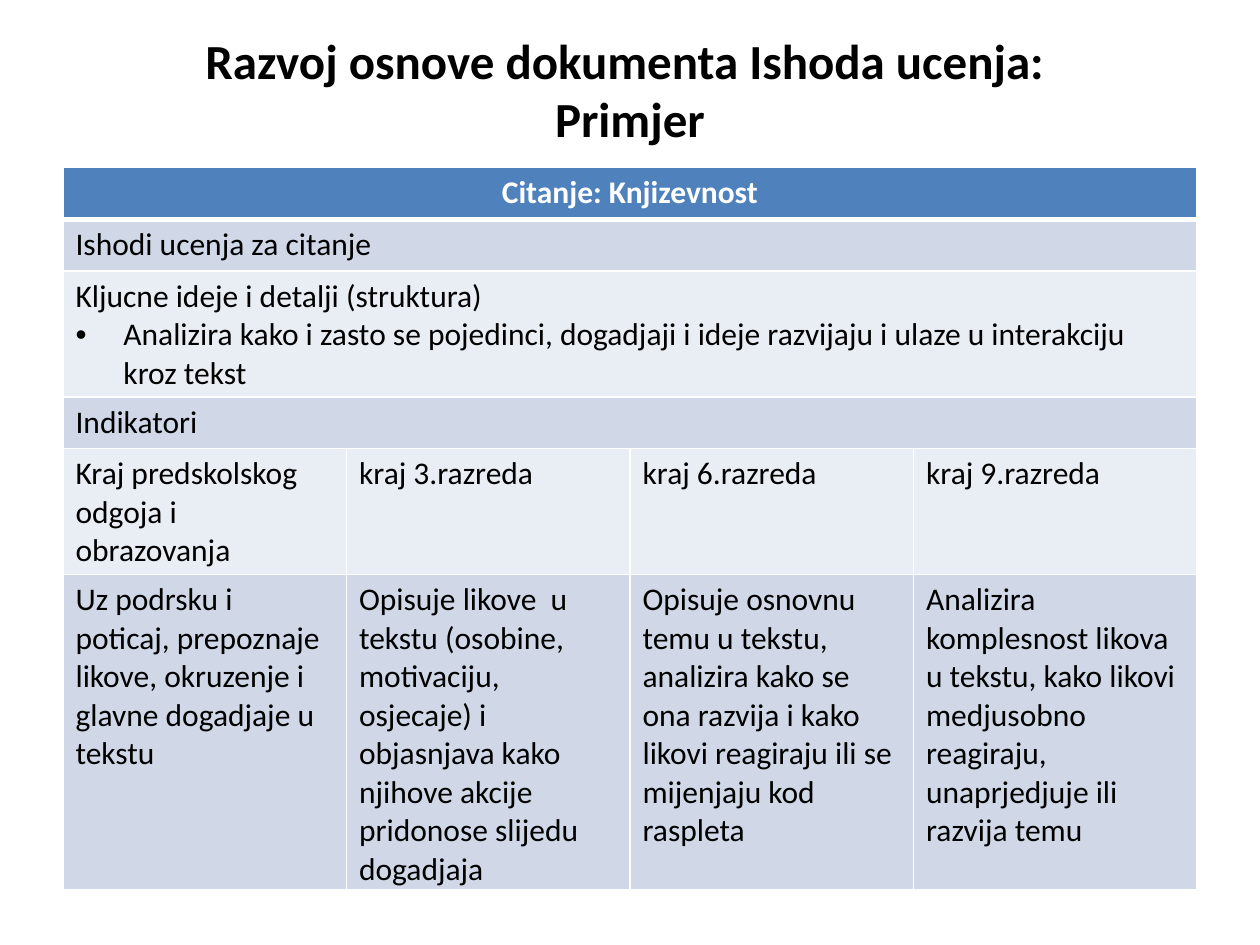
from dataclasses import dataclass

from lxml.etree import SubElement
from pptx import Presentation
from pptx.dml.color import RGBColor
from pptx.enum.text import MSO_ANCHOR, PP_ALIGN
from pptx.oxml.ns import qn
from pptx.util import Inches, Pt


@dataclass(frozen=True)
class Theme:
    font: str = "Calibri"
    title: int = 28
    body: int = 18
    ink: str = "000000"
    white: str = "FFFFFF"
    head: str = "4F81BD"
    bands: tuple = ("E9EDF4", "D0D8E8")


THEME = Theme()
COLS = 4
BULLET = "• "
TITLE = "Razvoj osnove dokumenta Ishoda ucenja: \vPrimjer"
ROWS = [
    ["Citanje: Knjizevnost"],
    ["Ishodi ucenja za citanje"],
    ["Kljucne ideje i detalji (struktura)\n"
     "• Analizira kako i zasto se pojedinci, dogadjaji i ideje razvijaju "
     "i ulaze u interakciju kroz tekst"],
    ["Indikatori"],
    ["Kraj predskolskog odgoja i obrazovanja", "kraj 3.razreda",
     "kraj 6.razreda", "kraj 9.razreda"],
    ["Uz podrsku i poticaj, prepoznaje likove, okruzenje i glavne "
     "dogadjaje u tekstu",
     "Opisuje likove  u tekstu (osobine, motivaciju, osjecaje) i objasnjava "
     "kako njihove akcije pridonose slijedu dogadjaja",
     "Opisuje osnovnu temu u tekstu, analizira kako se ona razvija i kako "
     "likovi reagiraju ili se mijenjaju kod raspleta",
     "Analizira komplesnost likova u tekstu, kako likovi medjusobno "
     "reagiraju, unaprjedjuje ili razvija temu"],
]
HEIGHTS = [0.41] * 5 + [1.22]


def style(para, size, color, bold, align):
    """Set the font and alignment of one paragraph."""
    font = para.font
    font.name, font.size, font.bold = THEME.font, Pt(size), bold
    font.color.rgb = RGBColor.from_string(color)
    para.alignment = align


def add_title(slide):
    """Add the centred heading."""
    box = slide.shapes.add_textbox(Inches(0.5), Inches(0.08), Inches(9), Inches(1.25))
    frame = box.text_frame
    frame.word_wrap = True
    frame.vertical_anchor = MSO_ANCHOR.MIDDLE
    frame.text = TITLE
    style(frame.paragraphs[0], THEME.title, THEME.ink, True, PP_ALIGN.CENTER)


def add_bullet(para):
    """Give a paragraph a hanging bullet."""
    props = para._p.get_or_add_pPr()
    props.set("marL", str(Inches(0.38)))
    props.set("indent", str(-Inches(0.38)))
    SubElement(props, qn("a:buFont"), typeface="Arial")
    SubElement(props, qn("a:buChar"), char=BULLET.strip())


def add_lines(cell, row):
    """Draw white cell borders, thicker under the header."""
    props = cell._tc.get_or_add_tcPr()
    widths = {"L": 1, "R": 1, "T": 3 if row == 1 else 1, "B": 3 if row == 0 else 1}
    for side, width in widths.items():
        line = SubElement(props, qn(f"a:ln{side}"), w=str(Pt(width)))
        fill = SubElement(line, qn("a:solidFill"))
        SubElement(fill, qn("a:srgbClr"), val=THEME.white)


def paint(cell, row):
    """Set the borders and fill of a cell."""
    add_lines(cell, row)
    cell.fill.solid()
    color = THEME.bands[row % 2] if row else THEME.head
    cell.fill.fore_color.rgb = RGBColor.from_string(color)


def write(cell, text, head):
    """Write the paragraphs of a cell."""
    cell.text = text.replace(BULLET, "")
    color = THEME.white if head else THEME.ink
    align = PP_ALIGN.CENTER if head else PP_ALIGN.LEFT
    for para, line in zip(cell.text_frame.paragraphs, text.split("\n")):
        style(para, THEME.body, color, head, align)
        if line.startswith(BULLET):
            add_bullet(para)


def add_grid(slide):
    """Add the table of outcomes and indicators."""
    frame = slide.shapes.add_table(
        len(ROWS), COLS, Inches(0.5), Inches(1.33), Inches(9), Inches(sum(HEIGHTS)))
    table = frame.table
    for row, (texts, height) in enumerate(zip(ROWS, HEIGHTS)):
        table.rows[row].height = Inches(height)
        for col in range(COLS):
            paint(table.cell(row, col), row)
        if len(texts) == 1:
            table.cell(row, 0).merge(table.cell(row, COLS - 1))
        for col, text in enumerate(texts):
            write(table.cell(row, col), text, row == 0)


def main():
    """Build and save the slide."""
    deck = Presentation()
    deck.slide_width, deck.slide_height = Inches(10), Inches(7.5)
    slide = deck.slides.add_slide(deck.slide_layouts[6])
    add_title(slide)
    add_grid(slide)
    deck.save("out.pptx")


if __name__ == "__main__":
    main()
